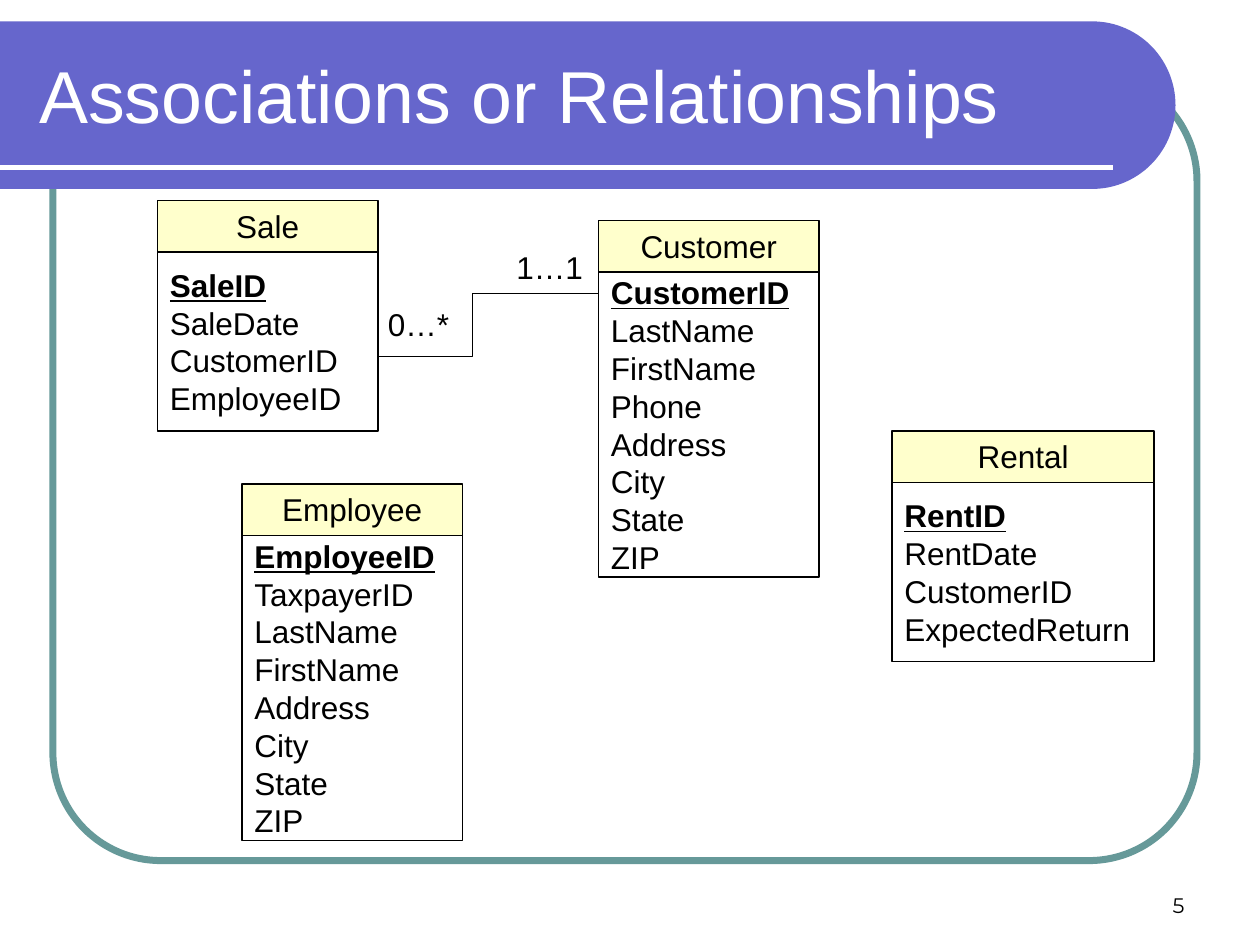
"""Build the class diagram slide on associations or relationships."""
import math

from lxml import etree
from pptx import Presentation
from pptx.dml.color import RGBColor
from pptx.enum.shapes import MSO_CONNECTOR, MSO_SHAPE
from pptx.enum.text import MSO_ANCHOR, MSO_AUTO_SIZE, PP_ALIGN
from pptx.oxml.ns import qn
from pptx.util import Inches, Pt

LEFT, CENTER, RIGHT = PP_ALIGN.LEFT, PP_ALIGN.CENTER, PP_ALIGN.RIGHT
TOP, MIDDLE, BOTTOM = MSO_ANCHOR.TOP, MSO_ANCHOR.MIDDLE, MSO_ANCHOR.BOTTOM
RECT, ROUND_RECT = MSO_SHAPE.RECTANGLE, MSO_SHAPE.ROUNDED_RECTANGLE


def style(sp, fill=None, line=None, width=0.75):
    sp.shadow.inherit = False
    if fill:
        sp.fill.solid()
        sp.fill.fore_color.rgb = RGBColor.from_string(fill)
    else:
        sp.fill.background()
    if line:
        sp.line.color.rgb = RGBColor.from_string(line)
        sp.line.width = Pt(width)
    else:
        sp.line.fill.background()


def write(sp, text, size=18, font="Arial", color="000000", align=LEFT,
          anchor=TOP, wrap=True, key=False):
    tf = sp.text_frame
    tf.auto_size = MSO_AUTO_SIZE.NONE
    tf.word_wrap = wrap
    tf.vertical_anchor = anchor
    for i, item in enumerate(text.split("\n")):
        p = tf.add_paragraph() if i else tf.paragraphs[0]
        p.alignment = align
        r = p.add_run()
        r.text = item
        r.font.size = Pt(size)
        r.font.name = font
        r.font.color.rgb = RGBColor.from_string(color)
        r.font.bold = r.font.underline = key and i == 0


prs = Presentation()
prs.slide_width, prs.slide_height = Inches(10), Inches(7.5)
s = prs.slides.add_slide(prs.slide_layouts[5])

frame = s.shapes.add_shape(ROUND_RECT, Inches(0.42), Inches(0.58), Inches(9.08), Inches(6.25))
frame.adjustments[0] = 0.137
style(frame, line="669999", width=4)

arc = [math.radians(a) for a in range(-90, 91, 3)]
points = [(Inches(8.67 + 0.66 * math.cos(a)), Inches(0.835 + 0.665 * math.sin(a))) for a in arc]
fb = s.shapes.build_freeform(0, Inches(0.17))
fb.add_line_segments(points + [(0, Inches(1.5))], close=True)
style(fb.convert_to_shape(), fill="6666CC")

rule = s.shapes.add_connector(MSO_CONNECTOR.STRAIGHT, 0, Inches(1.33), Inches(8.83), Inches(1.33))
rule.line.color.rgb = RGBColor.from_string("FFFFFF")
rule.line.width = Pt(3)
etree.SubElement(rule.element.spPr, qn("a:effectLst"))

title = s.shapes.title
title.left, title.top, title.width, title.height = Inches(0.21), Inches(0.25), Inches(8.77), Inches(1)
write(title, "Associations or Relationships", size=42, color="FFFFFF", anchor=MIDDLE)
title.element.getparent().append(title.element)

classes = [
    ("Employee", 1.92, 3.84, 1.75, 2.42,
     "EmployeeID\nTaxpayerID\nLastName\nFirstName\nAddress\nCity\nState\nZIP"),
    ("Customer", 4.75, 1.75, 1.75, 2.42,
     "CustomerID\nLastName\nFirstName\nPhone\nAddress\nCity\nState\nZIP"),
    ("Sale", 1.25, 1.59, 1.75, 1.42, "SaleID\nSaleDate\nCustomerID\nEmployeeID"),
    ("Rental", 7.08, 3.42, 2.08, 1.42, "RentID\nRentDate\nCustomerID\nExpectedReturn"),
]
for name, x, y, w, h, fields in classes:
    head = s.shapes.add_shape(RECT, Inches(x), Inches(y), Inches(w), Inches(0.41))
    style(head, fill="FFFFCC", line="000000")
    write(head, name, align=CENTER)
    body = s.shapes.add_shape(RECT, Inches(x), Inches(y + 0.41), Inches(w), Inches(h))
    style(body, line="000000")
    write(body, fields, anchor=MIDDLE, wrap=False, key=True)

fb = s.shapes.build_freeform(Inches(3), Inches(2.83))
fb.add_line_segments([(Inches(x), Inches(y)) for x, y in [(3.75, 2.83), (3.75, 2.33), (4.75, 2.33)]],
                     close=False)
style(fb.convert_to_shape(), line="000000")

labels = [
    ("0…*", 2.98, 2.37, 0.69, 0.4, {"wrap": False}),
    ("1…1", 4, 1.92, 0.73, 0.4, {"wrap": False}),
    ("5", 7.17, 6.83, 2.33, 0.5,
     {"size": 12, "font": "Montserrat", "align": RIGHT, "anchor": BOTTOM}),
]
for text, x, y, w, h, options in labels:
    write(s.shapes.add_textbox(Inches(x), Inches(y), Inches(w), Inches(h)), text, **options)

prs.save("out.pptx")
